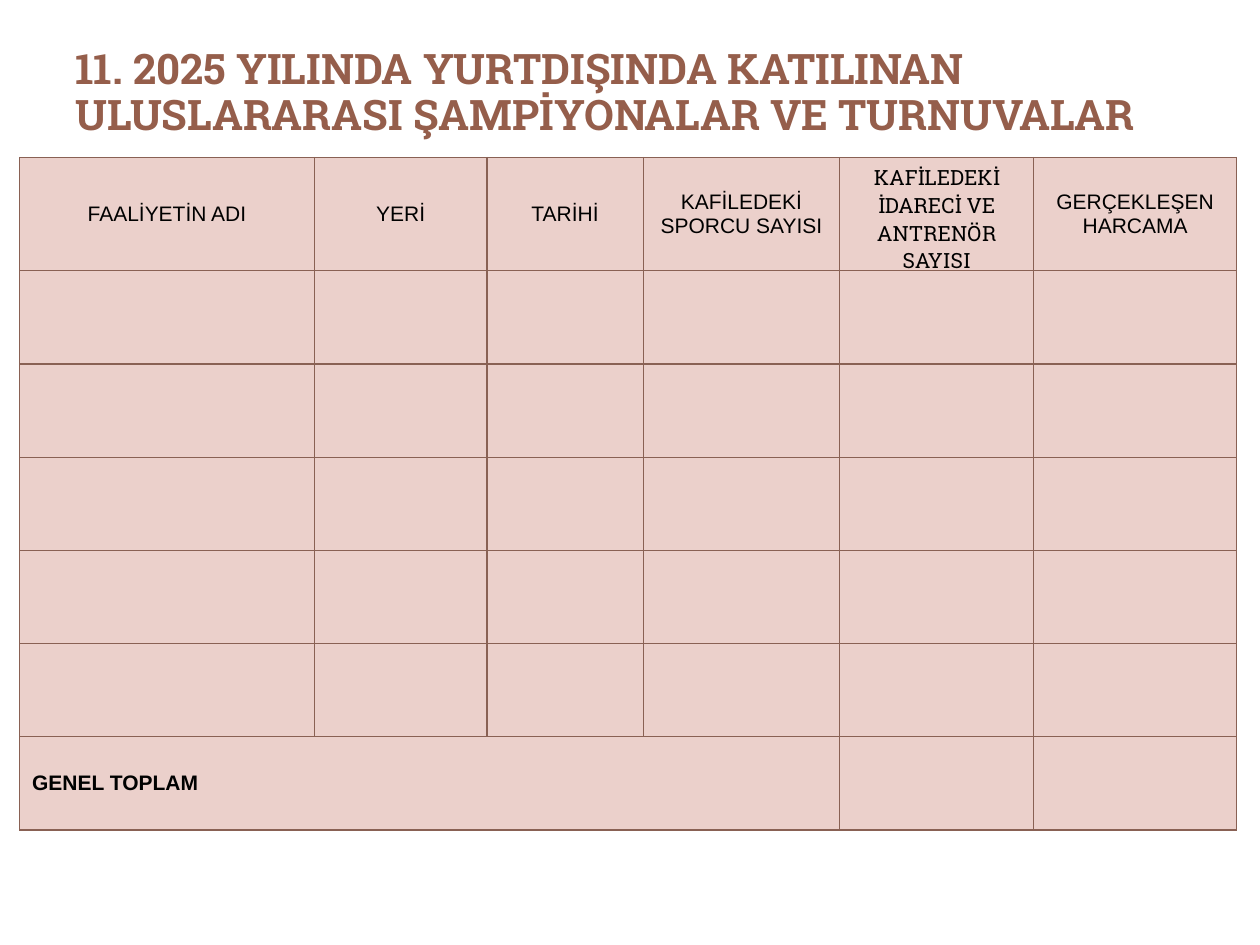
from lxml.etree import SubElement
from pptx import Presentation
from pptx.dml.color import RGBColor
from pptx.enum.text import MSO_ANCHOR as Anchor, PP_ALIGN as Align
from pptx.oxml.ns import qn
from pptx.util import Pt

TITLE = "11. 2025 YILINDA YURTDIŞINDA KATILINAN ULUSLARARASI ŞAMPİYONALAR VE TURNUVALAR"
HEADERS = [
    ("FAALİYETİN ADI", "Arial"),
    ("YERİ", "Arial"),
    ("TARİHİ", "Arial"),
    ("KAFİLEDEKİ SPORCU SAYISI", "Arial"),
    ("KAFİLEDEKİ İDARECİ VE ANTRENÖR SAYISI", "Roboto Slab"),
    ("GERÇEKLEŞEN HARCAMA", "Arial"),
]
WIDTHS = [168.5, 98.6, 89.3, 112.3, 110.9, 115.9]
ROWS, ROW_HEIGHT = 7, 53.28


def rgb(value):
    return RGBColor.from_string(value)


class Deck:
    """Holds the style and the current slide."""

    heading, ink, fill, border = "955E4B", "000000", "EBD0CB", "896154"

    def __init__(self, width, height):
        self.prs = Presentation()
        self.prs.slide_width, self.prs.slide_height = Pt(width), Pt(height)
        self.s = self.prs.slides.add_slide(self.prs.slide_layouts[6])

    def set_text(self, tf, text, size, font, color, bold=False, align=Align.LEFT):
        p = tf.paragraphs[0]
        p.text, p.alignment = text, align
        p.font.size, p.font.name, p.font.bold = Pt(size), font, bold
        p.font.color.rgb = rgb(color)
        return p

    def title(self, text, x, y, w, h):
        tf = self.s.shapes.add_textbox(Pt(x), Pt(y), Pt(w), Pt(h)).text_frame
        tf.word_wrap, tf.vertical_anchor = True, Anchor.TOP
        tf.margin_top = Pt(5.5)
        p = self.set_text(tf, text, 24, "Roboto Slab", self.heading, bold=True)
        p.line_spacing = 0.92

    def table(self, x, y, widths, rows, row_height):
        frame = self.s.shapes.add_table(
            rows, len(widths), Pt(x), Pt(y), Pt(sum(widths)), Pt(rows * row_height))
        table = frame.table
        table.first_row = table.horz_banding = False
        for column, width in zip(table.columns, widths):
            column.width = Pt(width)
        for cell in table.iter_cells():
            self.style(cell)
        return table

    def style(self, cell):
        cell.vertical_anchor = Anchor.MIDDLE
        pr = cell._tc.get_or_add_tcPr()
        for side in ("a:lnL", "a:lnR", "a:lnT", "a:lnB"):
            ln = SubElement(pr, qn(side), w=str(Pt(0.75)))
            SubElement(SubElement(ln, qn("a:solidFill")), qn("a:srgbClr"), val=self.border)
        cell.fill.solid()
        cell.fill.fore_color.rgb = rgb(self.fill)

    def label(self, cell, text, font="Arial", bold=False, align=Align.CENTER):
        self.set_text(cell.text_frame, text, 12, font, self.ink, bold, align)


def main():
    deck = Deck(720, 540)
    deck.title(TITLE, 36, 21.6, 648, 90)
    table = deck.table(11.2, 89.9, WIDTHS, ROWS, ROW_HEIGHT)
    for col, (text, font) in enumerate(HEADERS):
        deck.label(table.cell(0, col), text, font)
    total = table.cell(ROWS - 1, 0)
    total.merge(table.cell(ROWS - 1, 3))
    deck.label(total, "GENEL TOPLAM", bold=True, align=Align.LEFT)
    deck.prs.save("out.pptx")


if __name__ == "__main__":
    main()
